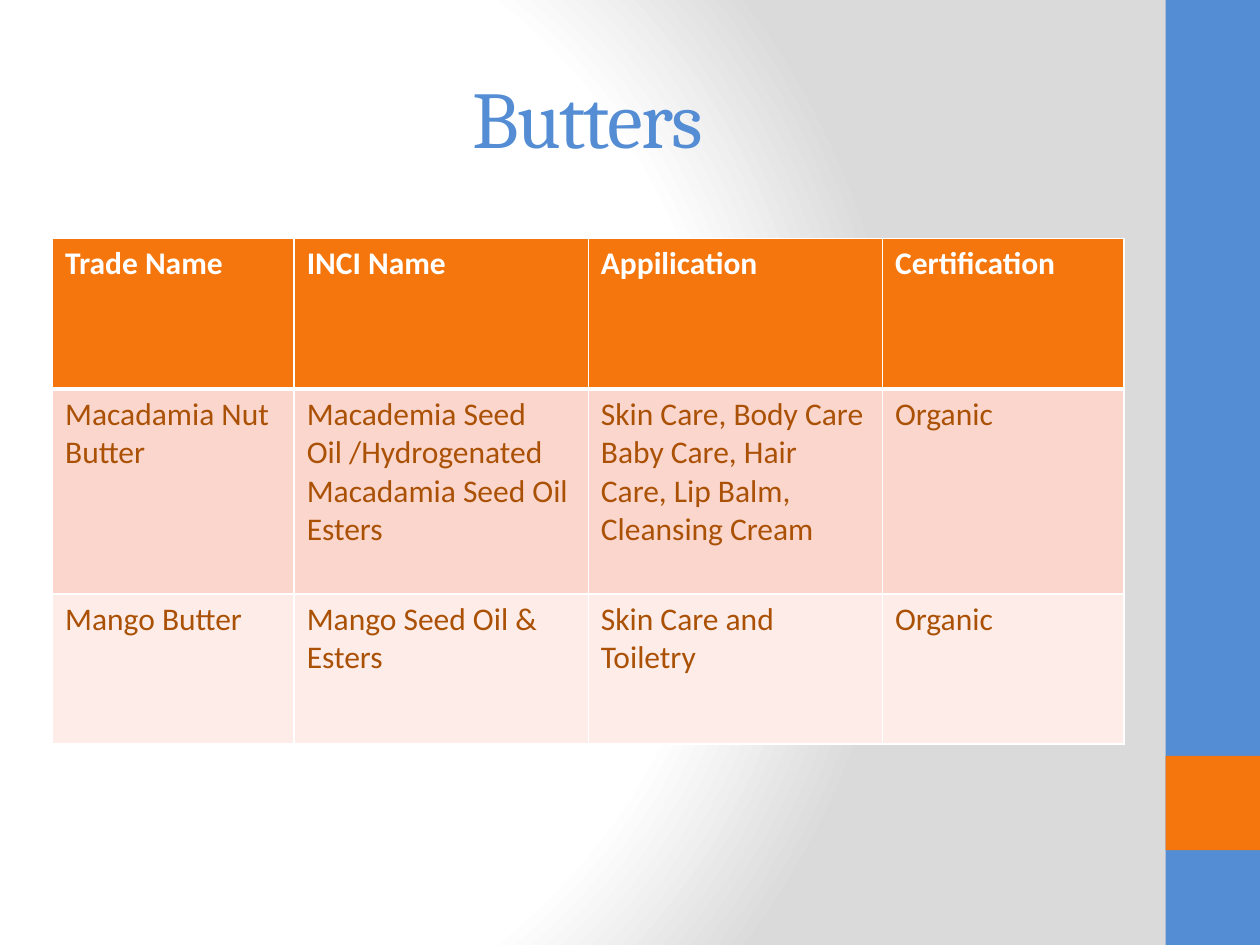
from dataclasses import dataclass

from pptx import Presentation
from pptx import util as u
from pptx.dml.color import RGBColor
from pptx.enum import shapes, text
from pptx.oxml import parse_xml
from pptx.oxml.ns import nsdecls, qn


@dataclass(frozen=True)
class Theme:
    """Colours, fonts and type sizes of the slide."""
    blue: str = "548DD4"
    orange: str = "F4760D"
    brown: str = "AA5106"
    white: str = "FFFFFF"
    grey: str = "DADADA"
    bands: tuple = ("FBD6CC", "FDECE7")
    title_font: str = "Cambria"
    body_font: str = "Calibri"
    title_size: int = 46
    body_size: int = 18


THEME = Theme()
COLUMNS = (4.87, 5.93, 5.93, 4.87)
ROWS = (3.03, 4.13, 3.03)
BUTTERS = (
    ("Trade Name", "INCI Name", "Appilication", "Certification"),
    ("Macadamia Nut Butter",
     "Macademia Seed Oil /Hydrogenated Macadamia Seed Oil Esters",
     "Skin Care, Body Care\vBaby Care, Hair\vCare, Lip Balm, Cleansing Cream",
     "Organic"),
    ("Mango Butter", "Mango Seed Oil & Esters", "Skin Care and Toiletry", "Organic"),
)


def set_background(s):
    """Fill the slide with a radial gradient from white to grey."""
    s.background.fill.gradient()
    grad = s.element.find(".//" + qn("a:gradFill"))
    stops = "".join(
        f'<a:gs pos="{pos * 1000}"><a:srgbClr val="{color}"/></a:gs>'
        for pos, color in ((0, THEME.white), (75, THEME.white), (100, THEME.grey)))
    grad.getparent().replace(grad, parse_xml(
        f'<a:gradFill {nsdecls("a")} rotWithShape="1"><a:gsLst>{stops}</a:gsLst>'
        '<a:path path="circle"><a:fillToRect l="20000" t="50000" r="100000" b="50000"/>'
        '</a:path></a:gradFill>'))


def add_block(s, left, top, width, height, color):
    """Add a plain rectangle without outline."""
    sp = s.shapes.add_shape(shapes.MSO_SHAPE.RECTANGLE,
                            *map(u.Cm, (left, top, width, height)))
    sp.shadow.inherit = False
    sp.fill.solid()
    sp.fill.fore_color.rgb = RGBColor.from_string(color)
    sp.line.fill.background()


def style_runs(p, font, size, color, bold=False):
    """Format every run of a paragraph."""
    for r in p.runs:
        r.font.name = font
        r.font.size = u.Pt(size)
        r.font.bold = bold
        r.font.color.rgb = RGBColor.from_string(color)


def set_title(s, title):
    """Place and format the title placeholder."""
    sp = s.shapes.title
    sp.left, sp.top, sp.width, sp.height = map(u.Cm, (1.27, 0.76, 21.16, 3.18))
    tf = sp.text_frame
    tf.text = title
    tf.vertical_anchor = text.MSO_ANCHOR.MIDDLE
    p = tf.paragraphs[0]
    p.alignment = text.PP_ALIGN.CENTER
    style_runs(p, THEME.title_font, THEME.title_size, THEME.blue)
    for r in p.runs:
        r.font._element.set("spc", "-100")


def set_borders(cell, top, bottom):
    """Draw white borders, with top and bottom widths in points."""
    tc_pr = cell._tc.get_or_add_tcPr()
    for i, (side, width) in enumerate(zip("LRTB", (1, 1, top, bottom))):
        tc_pr.insert(i, parse_xml(
            f'<a:ln{side} {nsdecls("a")} w="{u.Pt(width)}"><a:solidFill>'
            f'<a:srgbClr val="{THEME.white}"/></a:solidFill></a:ln{side}>'))


def add_butter_table(s):
    """Add the table with a header row and banded body rows."""
    table = s.shapes.add_table(
        len(ROWS), len(COLUMNS), u.Cm(1.06), u.Cm(4.81),
        u.Cm(sum(COLUMNS)), u.Cm(sum(ROWS))).table
    for column, width in zip(table.columns, COLUMNS):
        column.width = u.Cm(width)
    for i, (row, height, values) in enumerate(zip(table.rows, ROWS, BUTTERS)):
        row.height = u.Cm(height)
        header = i == 0
        fill = THEME.orange if header else THEME.bands[i - 1]
        color = THEME.white if header else THEME.brown
        for cell, value in zip(row.cells, values):
            cell.text = value
            cell.fill.solid()
            cell.fill.fore_color.rgb = RGBColor.from_string(fill)
            set_borders(cell, 3 if i == 1 else 1, 3 if header else 1)
            style_runs(cell.text_frame.paragraphs[0], THEME.body_font,
                       THEME.body_size, color, header)


def main():
    """Build the butters slide."""
    prs = Presentation()
    prs.slide_width, prs.slide_height = u.Cm(25.4), u.Cm(19.05)
    s = prs.slides.add_slide(prs.slide_layouts[5])
    set_background(s)
    add_block(s, 23.5, 0, 1.9, 19.05, THEME.blue)
    add_block(s, 23.5, 15.24, 1.9, 1.9, THEME.orange)
    set_title(s, "Butters")
    add_butter_table(s)
    prs.save("out.pptx")


if __name__ == "__main__":
    main()
